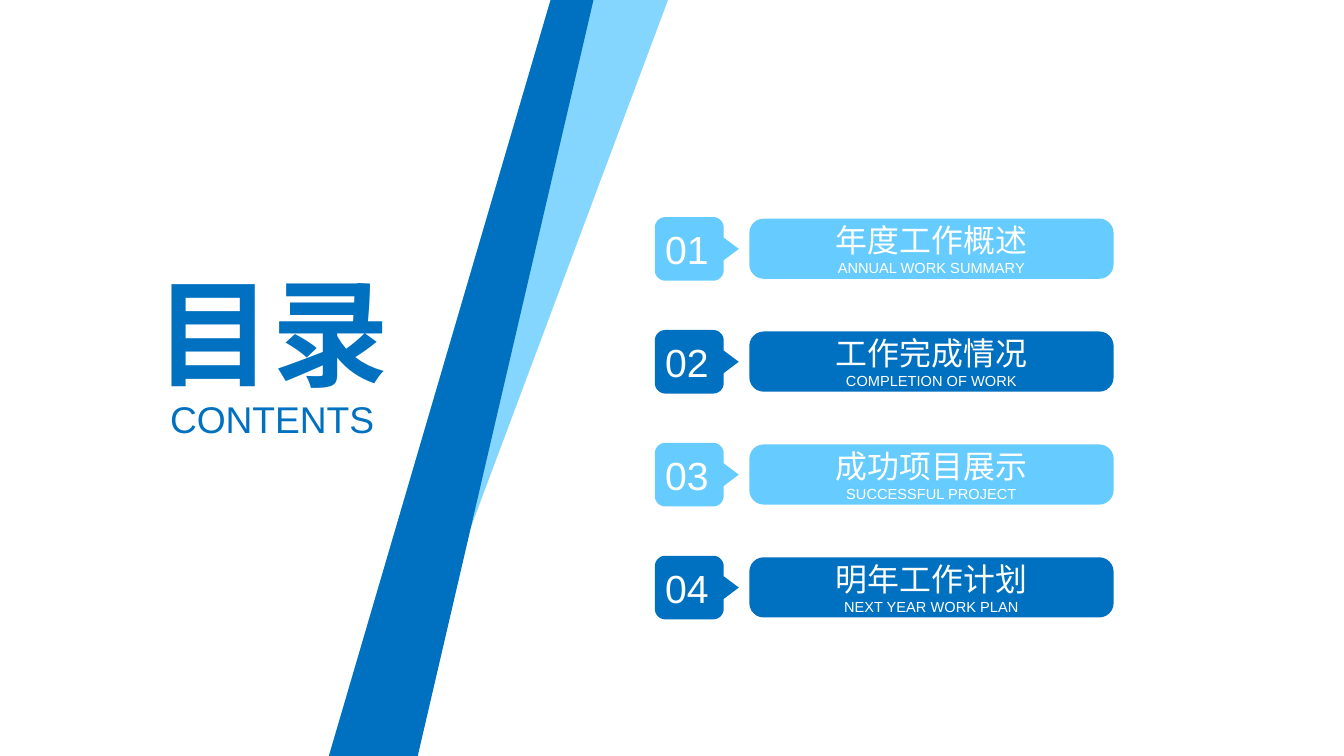
from math import cos, radians, sin

from lxml.etree import SubElement
from pptx import Presentation
from pptx.dml.color import RGBColor
from pptx.enum.shapes import MSO_SHAPE
from pptx.enum.text import MSO_ANCHOR, MSO_AUTO_SIZE, PP_ALIGN
from pptx.oxml.ns import qn
from pptx.util import Cm, Pt

BLUE = RGBColor(0x00, 0x70, 0xC0)
SKY = RGBColor(0x66, 0xCC, 0xFF)
WHITE = RGBColor(0xFF, 0xFF, 0xFF)
FONT = "Arial"

PAGE_WIDTH, PAGE_HEIGHT = 35.71, 20.09
ROW_PITCH = 3.0
CHAPTERS = [
    ("年度工作概述", "ANNUAL WORK SUMMARY"),
    ("工作完成情况", "COMPLETION OF WORK"),
    ("成功项目展示", "SUCCESSFUL PROJECT"),
    ("明年工作计划", "NEXT YEAR WORK PLAN"),
]


def write_text(shape, *lines, color=WHITE, bold=False, anchor=MSO_ANCHOR.MIDDLE,
               right_margin=0):
    """Write (text, size) lines as centred paragraphs."""
    frame = shape.text_frame
    frame.word_wrap = True
    frame.auto_size = MSO_AUTO_SIZE.NONE
    frame.vertical_anchor = anchor
    frame.margin_left = frame.margin_top = frame.margin_bottom = 0
    frame.margin_right = Cm(right_margin)
    for index, (text, size) in enumerate(lines):
        para = frame.add_paragraph() if index else frame.paragraphs[0]
        para.alignment = PP_ALIGN.CENTER
        span = para.add_run()
        span.text = text
        span.font.name = FONT
        span.font.size = Pt(size)
        span.font.bold = bold
        span.font.color.rgb = color


def paint(shape, color, opacity=100):
    shape.shadow.inherit = False
    shape.line.fill.background()
    shape.fill.solid()
    shape.fill.fore_color.rgb = color
    if opacity < 100:
        tint = shape.fill._xPr.find(qn("a:solidFill"))[0]
        SubElement(tint, qn("a:alpha"), val=str(opacity * 1000))


def add_outline(page, points, color, opacity=100):
    corners = [(Cm(x), Cm(y)) for x, y in points]
    builder = page.shapes.build_freeform(*corners[0])
    builder.add_line_segments(corners[1:], close=True)
    shape = builder.convert_to_shape()
    paint(shape, color, opacity)
    return shape


def add_heading(page, left, top, width):
    title = page.shapes.title
    title.left, title.top, title.width, title.height = (
        Cm(left), Cm(top), Cm(width), Cm(3.76))
    write_text(title, ("目录", 88), color=BLUE, bold=True, anchor=MSO_ANCHOR.TOP)

    subtitle = page.shapes.add_textbox(Cm(left), Cm(top + 3.59), Cm(width), Cm(1.19))
    write_text(subtitle, ("CONTENTS", 28), color=BLUE, anchor=MSO_ANCHOR.TOP)


def add_number_tag(page, left, top, width, height, number, color):
    """Rounded square with a small arrow tip on its right side."""
    radius, tip, half_tip = 0.28, 0.4, 0.3
    right, bottom, middle = left + width - tip, top + height, top + height / 2
    corners = [
        (right - radius, bottom - radius, 0),
        (left + radius, bottom - radius, 90),
        (left + radius, top + radius, 180),
        (right - radius, top + radius, 270),
    ]
    points = [
        (x + radius * cos(radians(start + turn)), y + radius * sin(radians(start + turn)))
        for x, y, start in corners for turn in range(0, 91, 10)
    ]
    points += [(right, middle - half_tip), (left + width, middle), (right, middle + half_tip)]
    tag = add_outline(page, points, color)
    write_text(tag, (number, 29.5), right_margin=0.53)


def add_chapter(page, left, top, number, name, english, color):
    bar = page.shapes.add_shape(
        MSO_SHAPE.ROUNDED_RECTANGLE, Cm(left + 2.51), Cm(top + 0.04), Cm(9.68), Cm(1.6))
    bar.adjustments[0] = 0.24
    paint(bar, color)
    write_text(bar, (name, 24), (english, 11))
    add_number_tag(page, left, top, 2.23, 1.69, number, color)


def add_chapters(page, left, top):
    for index, (name, english) in enumerate(CHAPTERS):
        color = BLUE if index % 2 else SKY
        add_chapter(page, left, top + index * ROW_PITCH, f"{index + 1:02}",
                    name, english, color)


def add_ribbon(page, left, top, height):
    """Two slanted bands that share their left edge."""
    bottom, peak = top + height, left + 5.89
    add_outline(page, [(peak, top), (left + 9.01, top),
                       (left + 1.5, bottom), (left, bottom)], SKY, opacity=80)
    add_outline(page, [(peak, top), (left + 7.03, top),
                       (left + 2.36, bottom), (left, bottom)], BLUE)


def main():
    deck = Presentation()
    deck.slide_width, deck.slide_height = Cm(PAGE_WIDTH), Cm(PAGE_HEIGHT)
    page = deck.slides.add_slide(deck.slide_layouts.get_by_name("Title Only"))

    add_chapters(page, left=17.4, top=5.77)
    add_heading(page, left=3.98, top=6.93, width=6.5)
    add_ribbon(page, left=8.74, top=0, height=PAGE_HEIGHT)

    deck.save("out.pptx")


if __name__ == "__main__":
    main()
